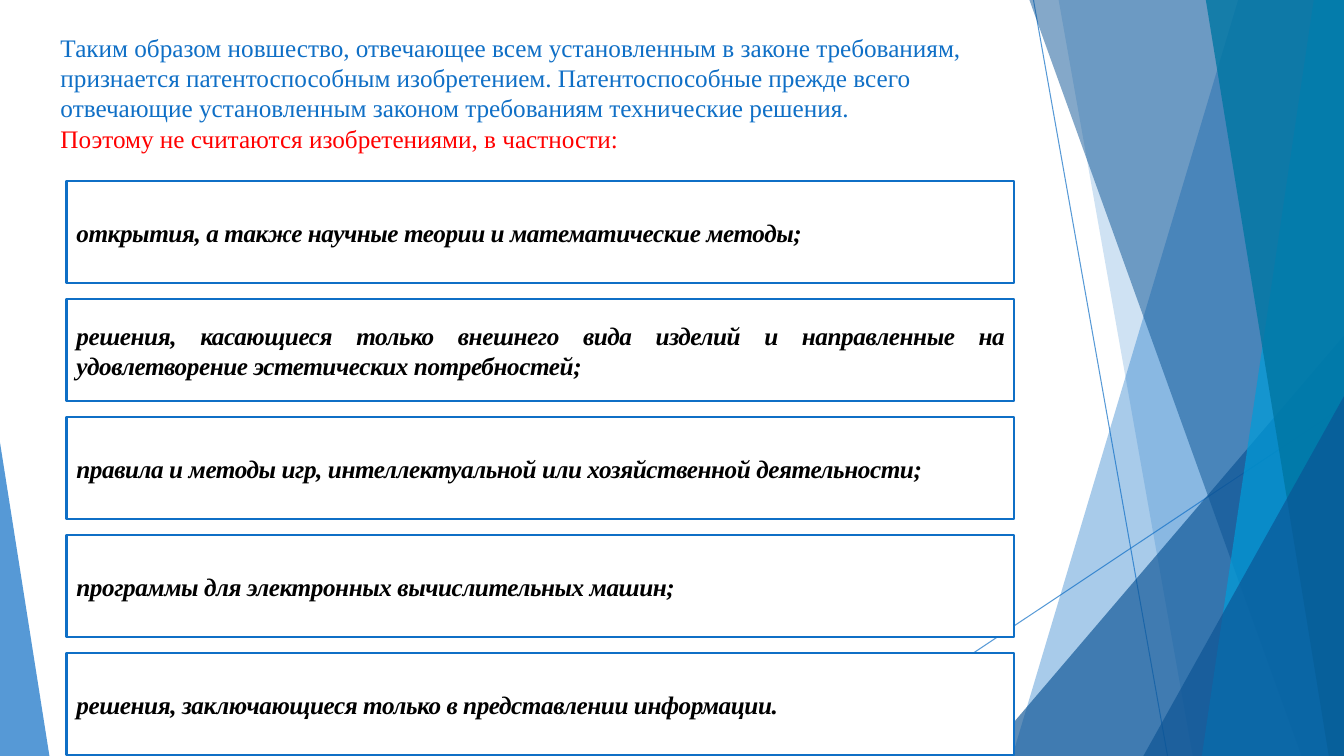
from pptx import Presentation
from pptx.dml.color import RGBColor
from pptx.enum.shapes import MSO_CONNECTOR, MSO_SHAPE
from pptx.enum.text import MSO_ANCHOR, MSO_AUTO_SIZE, PP_ALIGN
from pptx.oxml.ns import qn
from pptx.util import Inches, Pt
from lxml.etree import SubElement

BLUE, NAVY, CYAN, TEAL = "0F6FC6", "0B5394", "009DD9", "0076A3"
WIDTH, HEIGHT = 13.33, 7.5


def paint(fill, color):
    fill.solid()
    fill.fore_color.rgb = RGBColor.from_string(color)


def set_opacity(shape, percent):
    for color in shape.element.iter(qn("a:srgbClr")):
        SubElement(color, qn("a:alpha")).set("val", str(percent * 1000))


presentation = Presentation()
presentation.slide_width = Inches(WIDTH)
presentation.slide_height = Inches(HEIGHT)
slide = presentation.slides.add_slide(presentation.slide_layouts[5])
shapes = slide.shapes

for start_x, start_y, end_x in [(10.25, 0, 11.58), (WIDTH, 4.03, 8.12)]:
    line = shapes.add_connector(
        MSO_CONNECTOR.STRAIGHT, Inches(start_x), Inches(start_y), Inches(end_x), Inches(HEIGHT)
    )
    line.line.width = Pt(0.75)
    paint(line.line.fill, BLUE)
    set_opacity(line, 70)
    SubElement(line.element.spPr, qn("a:effectLst"))

facets = [
    ("band", (12.28, WIDTH, 10.04), BLUE, 36),
    ("band", (10.5, WIDTH, 11.83), BLUE, 20),
    ("triangle", (9.77, 3.33, 3.56, 1), NAVY, 66),
    ("band", (10.21, WIDTH, 12.91), NAVY, 50),
    ("band", (13.03, WIDTH, 11.92), CYAN, 70),
    ("band", (11.96, WIDTH, 13.18), TEAL, 80),
    ("triangle", (11.34, 3.93, 1.99, 1), NAVY, 66),
    ("triangle", (0, 4.39, 0.49, 0), BLUE, 70),
]
for kind, geometry, color, opacity in facets:
    if kind == "band":
        top_x, right, bottom_x = geometry
        builder = shapes.build_freeform(Inches(top_x), 0, scale=1.0)
        corners = [(right, 0), (right, HEIGHT), (bottom_x, HEIGHT)]
        builder.add_line_segments([(Inches(x), Inches(y)) for x, y in corners], close=True)
        facet = builder.convert_to_shape()
    else:
        left, top, width, apex = geometry
        facet = shapes.add_shape(
            MSO_SHAPE.ISOSCELES_TRIANGLE,
            Inches(left), Inches(top), Inches(width), Inches(HEIGHT - top),
        )
        facet.adjustments[0] = apex
    facet.shadow.inherit = False
    facet.line.fill.background()
    paint(facet.fill, color)
    set_opacity(facet, opacity)

title = shapes.title
title.left, title.top = Inches(0.5), Inches(0.27)
title.width, title.height = Inches(9.4), Inches(1.44)
title_frame = title.text_frame
title_frame.text = (
    "Таким образом новшество, отвечающее всем установленным в законе требованиям, "
    "признается патентоспособным изобретением. Патентоспособные прежде всего "
    "отвечающие установленным законом требованиям технические решения.\n"
    "Поэтому не считаются изобретениями, в частности:"
)
title_frame.word_wrap = True
title_frame.auto_size = MSO_AUTO_SIZE.NONE
title_frame.vertical_anchor = MSO_ANCHOR.TOP
for paragraph, color in zip(title_frame.paragraphs, [BLUE, "FF0000"]):
    paragraph.alignment = PP_ALIGN.LEFT
    font = paragraph.runs[0].font
    font.name, font.size = "Times New Roman", Pt(18)
    paint(font.fill, color)

exclusions = [
    "открытия, а также научные теории и математические методы;",
    "решения, касающиеся только внешнего вида изделий и направленные на "
    "удовлетворение эстетических потребностей;",
    "правила и методы игр, интеллектуальной или хозяйственной деятельности;",
    "программы для электронных вычислительных машин;",
    "решения, заключающиеся только в представлении информации.",
]
for index, exclusion in enumerate(exclusions):
    box = shapes.add_shape(
        MSO_SHAPE.RECTANGLE,
        Inches(0.66), Inches(1.8 + 1.17 * index), Inches(9.4), Inches(1.01),
    )
    box.shadow.inherit = False
    paint(box.fill, "FFFFFF")
    paint(box.line.fill, BLUE)
    box.line.width = Pt(1.5)
    box.text_frame.text = exclusion
    box.text_frame.word_wrap = True
    box.text_frame.vertical_anchor = MSO_ANCHOR.MIDDLE
    paragraph = box.text_frame.paragraphs[0]
    paragraph.alignment = PP_ALIGN.JUSTIFY
    run = paragraph.runs[0]
    run.font.name, run.font.size = "Times New Roman", Pt(18)
    run.font.bold = run.font.italic = True
    paint(run.font.fill, "000000")
    run._r.get_or_add_rPr().set("spc", "-30")

presentation.save("out.pptx")
